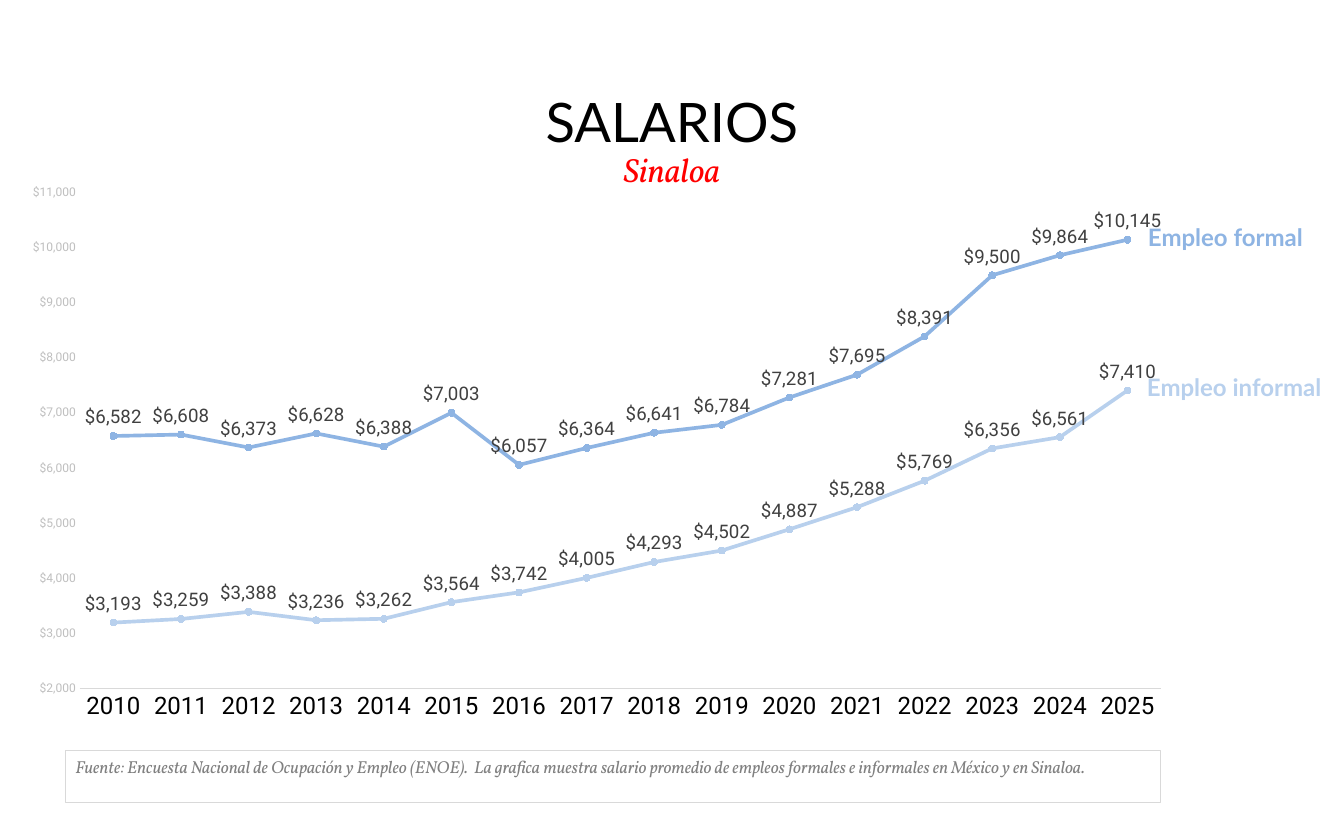
from lxml import etree
from pptx import Presentation
from pptx import util as u
from pptx.chart import data
from pptx.dml import color
from pptx.enum import chart as ch, shapes, text
from pptx.oxml import ns

PX = 9525


def paint(fmt, tone):
    fmt.solid()
    fmt.fore_color.rgb = color.RGBColor.from_string(tone)


def style(font, face, size, tone, bold=False, slant=False):
    font.name = face
    font.size = u.Pt(size)
    font.bold = bold
    font.italic = slant
    paint(font.fill, tone)


deck = Presentation()
deck.slide_width = 1344 * PX
deck.slide_height = 816 * PX
page = deck.slides.add_slide(deck.slide_layouts[5])

years = [str(year) for year in range(2010, 2026)]
pay = [
    ("Empleo formal", "8EB4E3",
     [6582, 6608, 6373, 6628, 6388, 7003, 6057, 6364,
      6641, 6784, 7281, 7695, 8391, 9500, 9864, 10145]),
    ("Empleo informal", "B8D0ED",
     [3193, 3259, 3388, 3236, 3262, 3564, 3742, 4005,
      4293, 4502, 4887, 5288, 5769, 6356, 6561, 7410]),
]
money = '"$"#,##0'
table = data.CategoryChartData(number_format=money)
table.categories = years
for name, tone, vals in pay:
    table.add_series(name, vals)
frame = page.shapes.add_chart(ch.XL_CHART_TYPE.LINE_MARKERS, 4 * PX, 176 * PX,
                              1181 * PX, 557 * PX, table)
chart = frame.chart
chart.has_legend = False
chart.has_title = False
style(chart.font, "Calibri", 10, "000000")
plot = chart.plots[0]
plot.vary_by_categories = False

base = chart.category_axis
style(base.tick_labels.font, "Roboto", 18, "000000")
paint(base.format.line.fill, "D9D9D9")
base.format.line.width = u.Pt(0.75)
scale = chart.value_axis
style(scale.tick_labels.font, "Roboto", 9, "BFBFBF")
scale.tick_labels.number_format = money
scale.tick_labels.number_format_is_linked = False
scale.format.line.fill.background()
scale.minimum_scale = 2000
scale.maximum_scale = 11000
scale.major_unit = 1000
for axis in (base, scale):
    axis.has_major_gridlines = False
    axis.major_tick_mark = ch.XL_TICK_MARK.NONE
    axis.minor_tick_mark = ch.XL_TICK_MARK.NONE

for line, (name, tone, vals) in zip(plot.series, pay):
    line.smooth = False
    paint(line.format.line.fill, tone)
    line.format.line.width = u.Pt(2.75)
    line.marker.style = ch.XL_MARKER_STYLE.CIRCLE
    line.marker.size = 5
    paint(line.marker.format.fill, tone)
    paint(line.marker.format.line.fill, tone)
    tags = line.data_labels
    tags.show_value = True
    tags.position = ch.XL_LABEL_POSITION.ABOVE
    tags.number_format = money
    tags.number_format_is_linked = False
    style(tags.font, "Roboto", 14, "404040")

area = plot.series[0].format.line
space = chart.element.find(".//" + ns.qn("c:plotArea"))
for old in space.findall(ns.qn("c:layout")):
    space.remove(old)
layout = etree.Element(ns.qn("c:layout"))
manual = etree.SubElement(layout, ns.qn("c:manualLayout"))
for tag, val in [("layoutTarget", "inner"), ("xMode", "edge"), ("yMode", "edge"),
                 ("x", "0.064"), ("y", "0.03"), ("w", "0.916"), ("h", "0.89")]:
    etree.SubElement(manual, ns.qn("c:" + tag)).set("val", val)
space.insert(0, layout)

title = page.shapes.title
title.left, title.top, title.width, title.height = [n * PX for n in (96, 83, 1152, 77)]
place = page.shapes.add_textbox(0, 144 * PX, 1344 * PX, 51 * PX)
source = page.shapes.add_shape(shapes.MSO_SHAPE.RECTANGLE, 66 * PX, 751 * PX,
                               1095 * PX, 52 * PX)
source.shadow.inherit = False
paint(source.fill, "FFFFFF")
paint(source.line.fill, "D9D9D9")
source.line.width = u.Pt(0.75)
note = ("Fuente: Encuesta Nacional de Ocupación y Empleo (ENOE).  La grafica muestra "
        "salario promedio de empleos formales e informales en México y en Sinaloa.")
mid, left = text.PP_ALIGN.CENTER, text.PP_ALIGN.LEFT
items = [
    (title, "SALARIOS", mid, "Lato", 40.8, "000000", False, False),
    (place, "Sinaloa", mid, "Vollkorn", 25.2, "FF0000", False, True),
    (source, note, left, "Vollkorn", 13, "808080", False, True),
]
for (name, tone, vals), x, y, w in zip(pay, (1148, 1147), (220, 370), (185, 201)):
    label = page.shapes.add_textbox(x * PX, y * PX, w * PX, 38 * PX)
    items.append((label, name, left, "Lato", 18, tone, True, False))

for shape, words, align, face, size, tone, bold, slant in items:
    body = shape.text_frame
    body.text = words
    body.word_wrap = True
    body.auto_size = text.MSO_AUTO_SIZE.NONE
    body.vertical_anchor = text.MSO_ANCHOR.TOP
    para = body.paragraphs[0]
    para.alignment = align
    style(para.runs[0].font, face, size, tone, bold, slant)
    if bold:
        body.margin_left = 0
        body.margin_top = body.margin_bottom = 7 * PX
        para.line_spacing = 0.85

deck.save("out.pptx")
